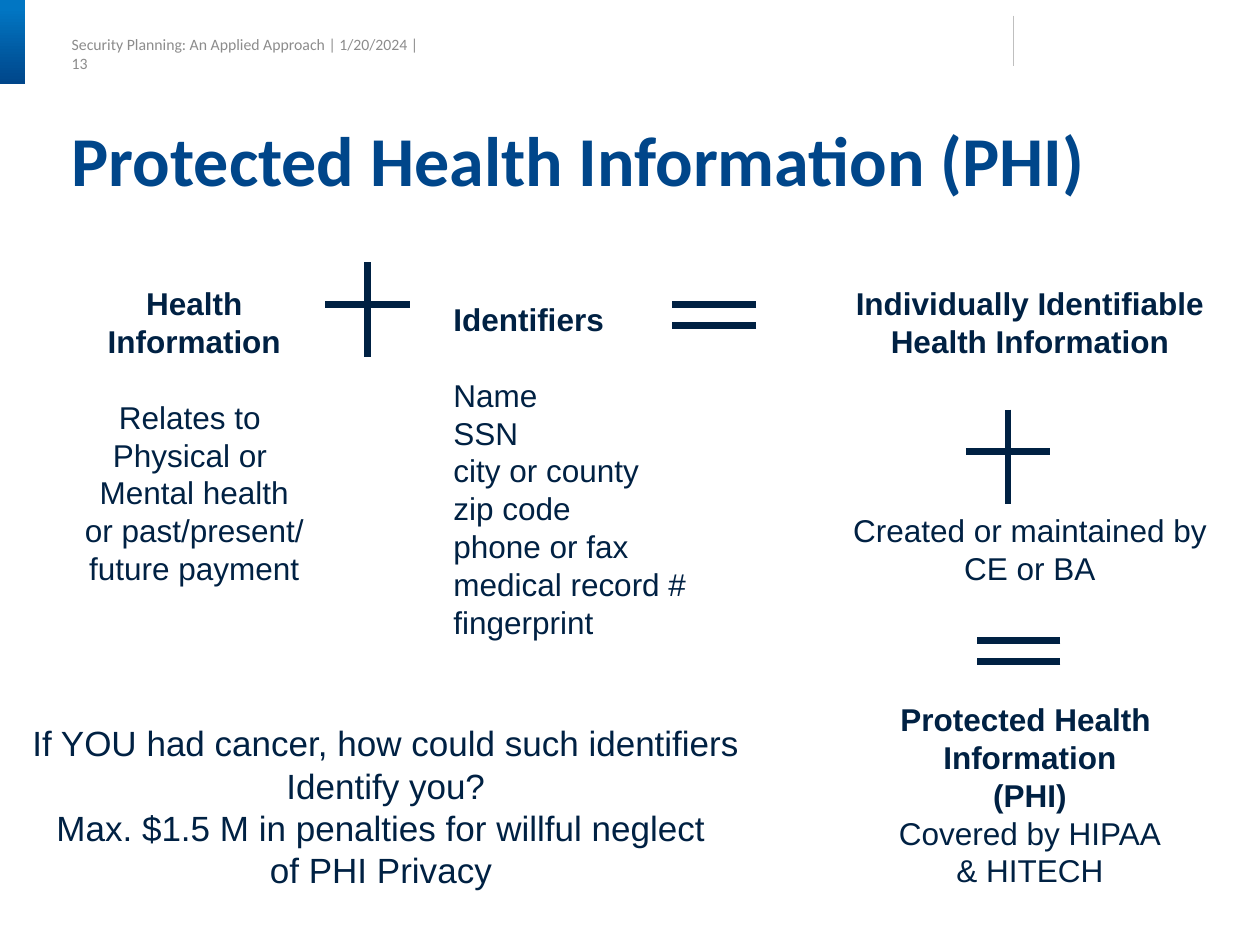
from lxml.etree import SubElement
from pptx import Presentation
from pptx.dml.color import RGBColor
from pptx.enum.shapes import MSO_CONNECTOR, MSO_SHAPE
from pptx.enum.text import MSO_ANCHOR, MSO_AUTO_SIZE, PP_ALIGN
from pptx.oxml.ns import qn
from pptx.util import Pt

NAVY = RGBColor(0x00, 0x21, 0x43)
BLUE = RGBColor(0x00, 0x46, 0x8A)
BRIGHT_BLUE = RGBColor(0x01, 0x76, 0xC3)
GRAY = RGBColor(0x8C, 0x8C, 0x8C)
LIGHT_GRAY = RGBColor(0xBF, 0xBF, 0xBF)

HEADER = "Security Planning: An Applied Approach | 1/20/2024 | 13"
TITLE = "Protected Health Information (PHI)"

# Each group of lines: (empty lines above, bold, lines)
BLOCKS = [
    {"box": (41, 159, 140, 180), "size": 18, "align": PP_ALIGN.CENTER, "groups": [
        (0, True, ["Health", "Information"]),
        (1, False, ["Relates to ", "Physical or ", "Mental health",
                    "or past/present/", "future payment"]),
    ]},
    {"box": (252, 168, 148, 202), "size": 18, "align": PP_ALIGN.LEFT, "groups": [
        (0, True, ["Identifiers"]),
        (1, False, ["Name", "SSN", "city or county", "zip code",
                    "phone or fax", "medical record #", "fingerprint"]),
    ]},
    {"box": (479.5, 159, 218, 356), "size": 18, "align": PP_ALIGN.CENTER, "groups": [
        (0, True, ["Individually Identifiable", "Health Information"]),
        (4, False, ["Created or maintained by", "CE or BA"]),
        (3, True, ["Protected Health ", "Information", "(PHI)"]),
        (0, False, ["Covered by HIPAA", "& HITECH"]),
    ]},
    {"box": (10, 409, 421, 104), "size": 20, "align": PP_ALIGN.CENTER, "groups": [
        (0, False, ["If YOU had cancer, how could such identifiers", "Identify you?",
                    "Max. $1.5 M in penalties for willful neglect ",
                    "of PHI Privacy "]),
    ]},
]

# Strokes of each sign, relative to its anchor
SIGN_STROKES = {
    "plus": [(0, -24, 0, 30), (-24, 0, 24, 0)],
    "equals": [(24, 0, -24, 0), (24, 12, -24, 12)],
}
SIGNS = [("plus", 210, 174), ("equals", 408, 174),
         ("plus", 576, 258), ("equals", 582, 366)]

LINE_PITCH = 1.2
NO_MARGINS = {"margin_left": 0, "margin_top": 0, "margin_right": 0, "margin_bottom": 0}


def apply(target, **values):
    for name, value in values.items():
        setattr(target, name, value)


def place(shape, left, top, width, height):
    apply(shape, left=Pt(left), top=Pt(top), width=Pt(width), height=Pt(height))


def add_line(slide, ends, color, width):
    line = slide.shapes.add_connector(MSO_CONNECTOR.STRAIGHT, *map(Pt, ends))
    line.line.color.rgb = color
    line.line.width = Pt(width)
    SubElement(line._element.spPr, qn("a:effectLst"))


def write(paragraph, text, color, **font):
    run = paragraph.add_run()
    run.text = text
    apply(run.font, **font)
    run.font.color.rgb = color


def add_block(slide, box, size, align, groups):
    frame = slide.shapes.add_textbox(*map(Pt, box)).text_frame
    apply(frame, word_wrap=False, auto_size=MSO_AUTO_SIZE.SHAPE_TO_FIT_TEXT)
    pitch = size * LINE_PITCH
    paragraph = None
    for gap, bold, lines in groups:
        for index, text in enumerate(lines):
            paragraph = frame.add_paragraph() if paragraph else frame.paragraphs[0]
            apply(paragraph, alignment=align, line_spacing=Pt(pitch))
            if gap and index == 0:
                paragraph.space_before = Pt(gap * pitch)
            write(paragraph, text, NAVY, name="Arial", size=Pt(size), bold=bold)


def add_header(slide):
    frame = slide.shapes.add_textbox(Pt(41), Pt(20), Pt(204), Pt(11)).text_frame
    apply(frame, word_wrap=False, **NO_MARGINS)
    write(frame.paragraphs[0], HEADER, GRAY, name="Calibri", size=Pt(9))

    tab = slide.shapes.add_shape(MSO_SHAPE.RECTANGLE, 0, 0, Pt(14.4), Pt(48))
    tab.shadow.inherit = False
    tab.line.fill.background()
    tab.fill.gradient()
    tab.fill.gradient_angle = 270
    for stop, (position, color) in zip(tab.fill.gradient_stops,
                                       [(0.1, BRIGHT_BLUE), (1, BLUE)]):
        stop.position = position
        stop.color.rgb = color

    add_line(slide, (579, 9, 579, 37.5), LIGHT_GRAY, 0.75)


def set_title(slide):
    title = slide.shapes.title
    place(title, 41, 72, 642, 39.6)
    apply(title.text_frame, word_wrap=True, vertical_anchor=MSO_ANCHOR.TOP,
          auto_size=MSO_AUTO_SIZE.SHAPE_TO_FIT_TEXT, **NO_MARGINS)
    paragraph = title.text_frame.paragraphs[0]
    apply(paragraph, alignment=PP_ALIGN.LEFT, line_spacing=0.9, space_before=Pt(0))
    write(paragraph, TITLE, BLUE, name="Calibri", size=Pt(40), bold=True)


def main():
    deck = Presentation()
    apply(deck, slide_width=Pt(720), slide_height=Pt(540))
    slide = deck.slides.add_slide(deck.slide_layouts[5])
    add_header(slide)
    set_title(slide)
    for block in BLOCKS:
        add_block(slide, **block)
    for sign, x, y in SIGNS:
        for x1, y1, x2, y2 in SIGN_STROKES[sign]:
            add_line(slide, (x + x1, y + y1, x + x2, y + y2), NAVY, 4)
    deck.save("out.pptx")


if __name__ == "__main__":
    main()
